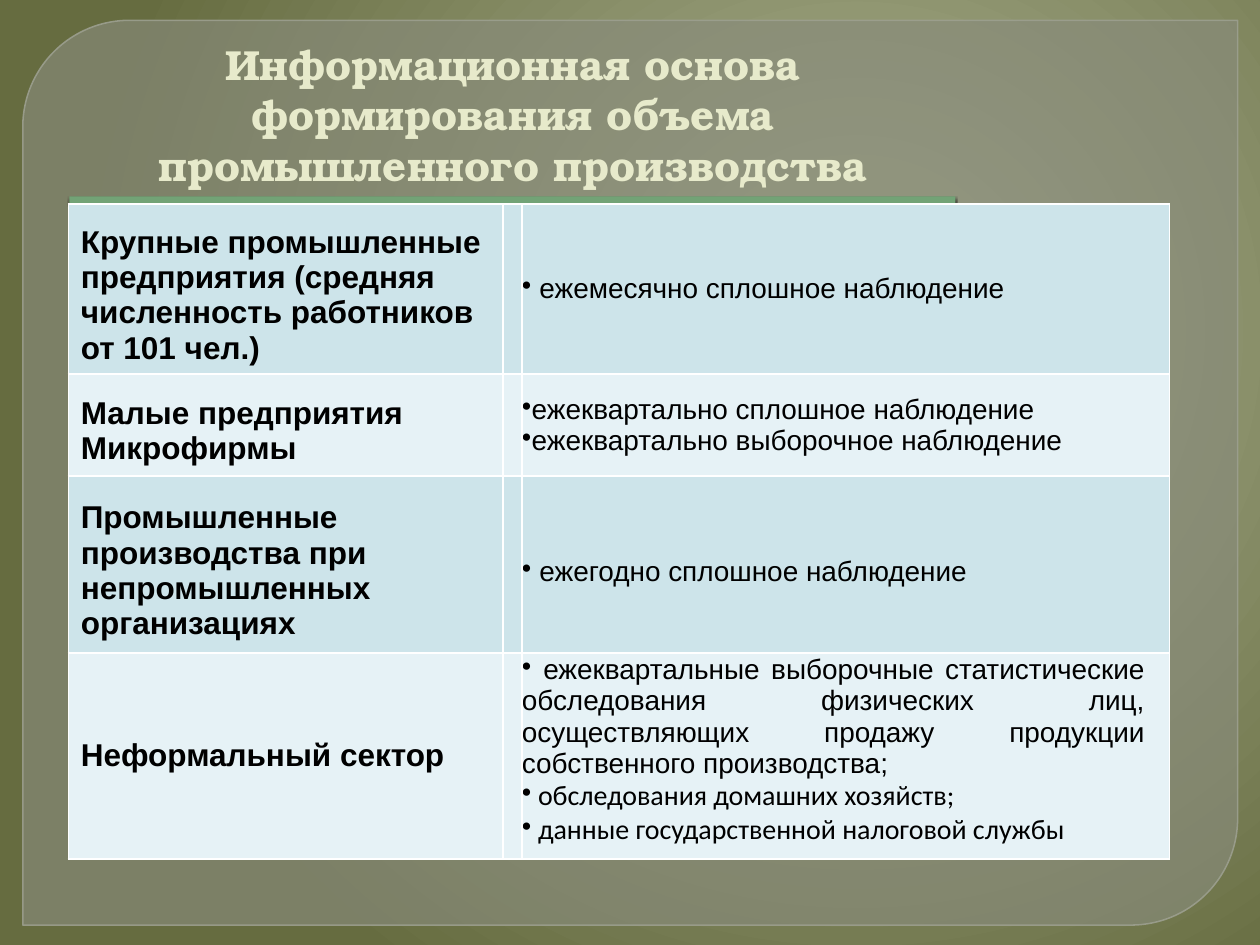
import lxml.etree
import pptx
import pptx.dml.color
import pptx.enum.shapes
import pptx.enum.text
import pptx.oxml
import pptx.oxml.ns
import pptx.util

Cm = pptx.util.Cm
Pt = pptx.util.Pt
Align = pptx.enum.text.PP_ALIGN
Middle = pptx.enum.text.MSO_ANCHOR.MIDDLE
Shape = pptx.enum.shapes.MSO_SHAPE
qn = pptx.oxml.ns.qn
NS = 'xmlns:a="http://schemas.openxmlformats.org/drawingml/2006/main"'

COLUMNS = (8.76, 0.38, 13.06)
ROW_HEIGHTS = (3.43, 2.06, 3.56, 4.16)
BANDS = ("CDE4EA", "E6F2F6")
SOURCES = [
    (["Крупные промышленные предприятия (средняя численность работников от 101 чел.)"],
     [" ежемесячно сплошное наблюдение"]),
    (["Малые предприятия", "Микрофирмы"],
     ["ежеквартально сплошное наблюдение", "ежеквартально выборочное наблюдение"]),
    (["Промышленные производства при непромышленных организациях"],
     [" ежегодно сплошное наблюдение"]),
    (["Неформальный сектор"],
     [" ежеквартальные выборочные статистические обследования физических лиц, "
      "осуществляющих продажу продукции собственного производства;",
      " обследования домашних хозяйств;",
      " данные государственной налоговой службы"]),
]


def colour(value):
    """Turn a hex string into a colour."""
    return pptx.dml.color.RGBColor.from_string(value)


def set_alpha(fill_format, percent):
    """Make a solid fill partly transparent."""
    tint = fill_format._xPr.find(qn("a:solidFill"))[0]
    lxml.etree.SubElement(tint, qn("a:alpha")).set("val", str(percent * 1000))


def style_font(font, name, size, value, bold=False):
    """Set the face, size, colour and weight of a font."""
    font.name, font.size, font.bold = name, Pt(size), bold
    font.color.rgb = colour(value)


def paint_background(page):
    """Fill the page with an off-centre radial gradient."""
    page.background.fill.gradient()
    gradient = page.background.element.find(".//" + qn("a:gradFill"))
    stops = "".join(
        f'<a:gs pos="{place * 1000}"><a:srgbClr val="{value}"/></a:gs>'
        for place, value in ((0, "A9AE8D"), (20, "9FA583"), (100, "666C40")))
    radial = pptx.oxml.parse_xml(
        f'<a:gradFill {NS} rotWithShape="1"><a:gsLst>{stops}</a:gsLst><a:path path="circle">'
        '<a:fillToRect l="68000" t="35000" r="32000" b="65000"/></a:path></a:gradFill>')
    gradient.getparent().replace(gradient, radial)


def add_panel(page, box):
    """Add the translucent panel with two rounded corners."""
    panel = page.shapes.add_shape(Shape.ROUND_2_DIAG_RECTANGLE, *map(Cm, box))
    panel.adjustments[0], panel.adjustments[1] = 0.118, 0
    panel.shadow.inherit = False
    panel.fill.solid()
    panel.fill.fore_color.rgb = colour("888B7B")
    set_alpha(panel.fill, 65)
    panel.line.color.rgb = colour("9DA090")
    panel.line.width = Pt(0.87)
    set_alpha(panel.line.fill, 88)


def add_rule(page, box):
    """Add the green bar under the title with its thin shadow."""
    rule = page.shapes.add_shape(Shape.RECTANGLE, *map(Cm, box))
    rule.fill.solid()
    rule.fill.fore_color.rgb = colour("72A376")
    rule.line.fill.background()
    rule.shadow.inherit = False
    effects = rule.element.spPr.find(qn("a:effectLst"))
    effects.append(pptx.oxml.parse_xml(
        f'<a:outerShdw {NS} blurRad="12700" dist="12700" dir="5400000" rotWithShape="0">'
        '<a:srgbClr val="000000"><a:alpha val="75000"/></a:srgbClr></a:outerShdw>'))


def place_title(page, box):
    """Place and format the title in front of the panel."""
    title = page.shapes.title
    title.left, title.top, title.width, title.height = map(Cm, box)
    title.element.getparent().append(title.element)
    frame = title.text_frame
    frame.text = "Информационная основа\vформирования объема промышленного производства"
    frame.word_wrap = True
    frame.auto_size = pptx.enum.text.MSO_AUTO_SIZE.NONE
    frame.vertical_anchor = Middle
    para = frame.paragraphs[0]
    para.alignment = Align.CENTER
    para._p.get_or_add_pPr().set("marL", str(Cm(0.15)))
    style_font(para.font, "TeX Gyre Bonum", 24, "E7EACB", True)


def set_margins(cell, left=0, top=0, right=0, bottom=0):
    """Set the inner margins of a cell in centimetres."""
    cell.margin_left, cell.margin_top = Cm(left), Cm(top)
    cell.margin_right, cell.margin_bottom = Cm(right), Cm(bottom)


def fill_sector(cell, lines, top):
    """Write the bold name of a sector."""
    set_margins(cell, left=0.25, top=top)
    cell.text = "\n".join(lines)
    for para in cell.text_frame.paragraphs:
        style_font(para.font, "Arial", 18, "000000", True)


def fill_surveys(cell, lines, spacing):
    """Write the bulleted surveys of a sector."""
    set_margins(cell, right=0.5, bottom=0.2 if len(lines) > 2 else 0)
    cell.text = "\n".join(lines)
    for index, para in enumerate(cell.text_frame.paragraphs):
        bullet = lxml.etree.SubElement(para._p.get_or_add_pPr(), qn("a:buChar"))
        bullet.set("char", "•")
        para.alignment = Align.JUSTIFY
        para.line_spacing = spacing
        face = "Calibri" if len(lines) > 2 and index else "Arial"
        style_font(para.font, face, 16, "000000")


def add_sources(page, box):
    """Add the table of sectors and their surveys."""
    table = page.shapes.add_table(len(SOURCES), len(COLUMNS), *map(Cm, box)).table
    table.first_row = False
    for column, width in zip(table.columns, COLUMNS):
        column.width = Cm(width)
    for index, (sector, surveys) in enumerate(SOURCES):
        row = table.rows[index]
        row.height = Cm(ROW_HEIGHTS[index])
        for cell in row.cells:
            cell.fill.solid()
            cell.fill.fore_color.rgb = colour(BANDS[index % 2])
            cell.vertical_anchor = Middle
            set_margins(cell)
        fill_sector(row.cells[0], sector, 0 if index == 3 else 0.25)
        fill_surveys(row.cells[2], surveys, 1.5 if index == 2 else 1.0)


def main():
    """Build the slide and save it."""
    deck = pptx.Presentation()
    deck.slide_width, deck.slide_height = Cm(25.4), Cm(19.05)
    page = deck.slides.add_slide(deck.slide_layouts[5])
    paint_background(page)
    add_panel(page, (0.46, 0.41, 24.49, 18.24))
    add_rule(page, (1.4, 3.96, 17.86, 0.13))
    add_sources(page, (1.38, 4.11, sum(COLUMNS), sum(ROW_HEIGHTS)))
    place_title(page, (1.27, 0.71, 17.98, 3.18))
    deck.save("out.pptx")


if __name__ == "__main__":
    main()
